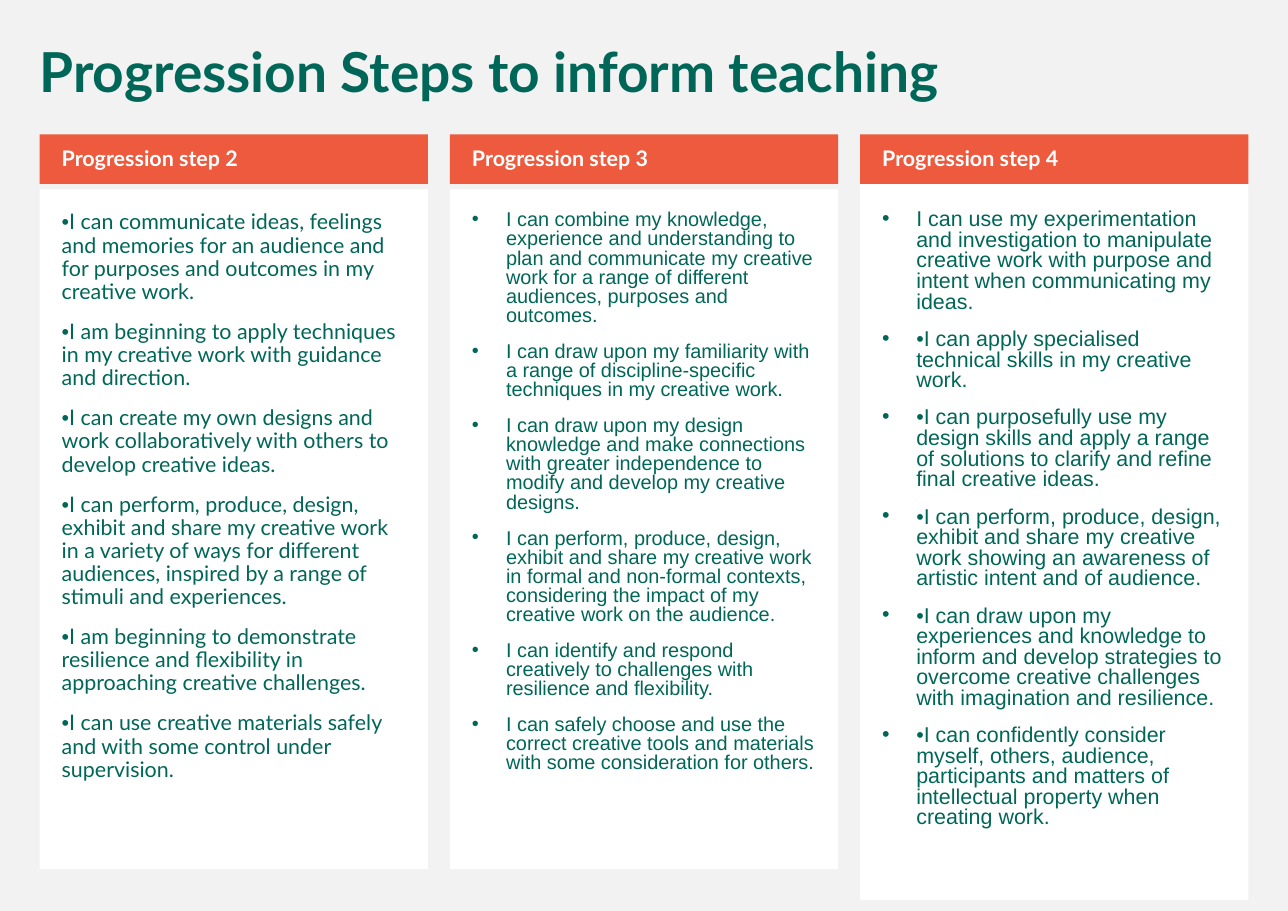
from dataclasses import dataclass

from lxml.etree import SubElement
from pptx import Presentation
from pptx.dml.color import RGBColor
from pptx.enum.shapes import MSO_SHAPE as Preset
from pptx.enum.text import MSO_ANCHOR as Anchor, PP_ALIGN as Align
from pptx.oxml.ns import qn
from pptx.util import Inches, Pt

WIDTH, HEIGHT = 11.69, 8.27
MARGIN, GAP = 0.36, 0.2
COLUMN_WIDTH = (WIDTH - 2 * MARGIN - 2 * GAP) / 3
COLUMN_TOP, HEADING_HEIGHT = 1.22, 0.45
INDENT = 0.31
GREEN, ORANGE, WHITE, GREY = "006758", "ED5A3E", "FFFFFF", "F2F2F2"


@dataclass
class Step:
    """A progression step and the setting of its statements."""

    heading: str
    statements: list
    size: int
    spacing: float
    hanging: bool
    panel_offset: float = 0.5
    panel_height: float = 6.17
    top_inset: float = 0.2


STEPS = [
    Step("Progression step 2", [
        "I can communicate ideas, feelings and memories for an audience and for purposes and outcomes in my creative work.",
        "I am beginning to apply techniques in my creative work with guidance and direction.",
        "I can create my own designs and work collaboratively with others to develop creative ideas.",
        "I can perform, produce, design, exhibit and share my creative work in a variety of ways for different audiences, inspired by a range of stimuli and experiences.",
        "I am beginning to demonstrate resilience and flexibility in approaching creative challenges.",
        "I can use creative materials safely and with some control under supervision.",
    ], 14, 0.9, False),
    Step("Progression step 3", [
        "I can combine my knowledge, experience and understanding to plan and communicate my creative work for a range of different audiences, purposes and outcomes.",
        "I can draw upon my familiarity with a range of discipline-specific techniques in my creative work.",
        "I can draw upon my design knowledge and make connections with greater independence to modify and develop my creative designs.",
        "I can perform, produce, design, exhibit and share my creative work in formal and non-formal contexts, considering the impact of my creative work on the audience.",
        "I can identify and respond creatively to challenges with resilience and flexibility.",
        "I can safely choose and use the correct creative tools and materials with some consideration for others.",
    ], 13, 0.8, True),
    Step("Progression step 4", [
        "I can use my experimentation and investigation to manipulate creative work with purpose and intent when communicating my ideas.",
        "•I can apply specialised technical skills in my creative work.",
        "•I can purposefully use my design skills and apply a range of solutions to clarify and refine final creative ideas.",
        "•I can perform, produce, design, exhibit and share my creative work showing an awareness of artistic intent and of audience.",
        "•I can draw upon my experiences and knowledge to inform and develop strategies to overcome creative challenges with imagination and resilience.",
        "•I can confidently consider myself, others, audience, participants and matters of intellectual property when creating work.",
    ], 14, 0.8, True, 0.22, 6.73, 0.47),
]


def paint(color_format, color):
    """Set a colour format from a hex string."""
    color_format.rgb = RGBColor.from_string(color)


def set_frame(frame, insets, anchor=Anchor.TOP):
    """Wrap a text frame and set its left, top, right and bottom insets."""
    frame.word_wrap = True
    frame.vertical_anchor = anchor
    frame.margin_left, frame.margin_top, frame.margin_right, frame.margin_bottom = map(Inches, insets)


def add_panel(slide, left, top, width, height, color):
    """Add a plain filled rectangle and return its text frame."""
    panel = slide.shapes.add_shape(Preset.RECTANGLE, *map(Inches, (left, top, width, height)))
    panel.shadow.inherit = False
    panel.fill.solid()
    paint(panel.fill.fore_color, color)
    panel.line.fill.background()
    return panel.text_frame


def set_paragraph(paragraph, spacing):
    """Align a paragraph left and set its spacing."""
    paragraph.alignment = Align.LEFT
    paragraph.line_spacing = spacing
    paragraph.space_before = Pt(11)


def add_run(paragraph, text, size, color, font="Lato", bold=False):
    """Add one formatted run."""
    run = paragraph.add_run()
    run.text = text
    run.font.name = font
    run.font.size = Pt(size)
    run.font.bold = bold
    paint(run.font.color, color)


def hang_bullet(paragraph):
    """Give a paragraph a hanging bullet."""
    properties = paragraph._p.get_or_add_pPr()
    properties.set("marL", str(Inches(INDENT)))
    properties.set("indent", str(-Inches(INDENT)))
    SubElement(properties, qn("a:buFont"), typeface="Arial")
    SubElement(properties, qn("a:buChar"), char="•")


def add_title(slide, left, top, width, height):
    """Place the slide title in its box."""
    title = slide.shapes.add_textbox(*map(Inches, (left, top, width, height))).text_frame
    set_frame(title, (0.1, 0.05, 0.1, 0.05))
    set_paragraph(title.paragraphs[0], 0.9)
    add_run(title.paragraphs[0], "Progression Steps to inform teaching", 36, GREEN, bold=True)


def add_step(slide, step, left, top, width):
    """Place a step's statements and its heading bar in a column."""
    body = add_panel(slide, left, top + step.panel_offset, width, step.panel_height, WHITE)
    set_frame(body, (0.2, step.top_inset, 0.2, 0.2))
    for index, statement in enumerate(step.statements):
        paragraph = body.add_paragraph() if index else body.paragraphs[0]
        set_paragraph(paragraph, step.spacing)
        if step.hanging:
            hang_bullet(paragraph)
            add_run(paragraph, statement, step.size, GREEN, "Arial")
        else:
            add_run(paragraph, "•", step.size, GREEN, "Arial")
            add_run(paragraph, statement, step.size, GREEN)

    heading = add_panel(slide, left, top, width, HEADING_HEIGHT, ORANGE)
    set_frame(heading, (0.2, 0.05, 0.1, 0.05), Anchor.MIDDLE)
    set_paragraph(heading.paragraphs[0], 0.9)
    add_run(heading.paragraphs[0], step.heading, 14, WHITE, bold=True)


def main():
    """Build and save the slide."""
    deck = Presentation()
    deck.slide_width, deck.slide_height = Inches(WIDTH), Inches(HEIGHT)
    slide = deck.slides.add_slide(deck.slide_layouts[6])
    slide.background.fill.solid()
    paint(slide.background.fill.fore_color, GREY)
    for column, step in enumerate(STEPS):
        add_step(slide, step, MARGIN + column * (COLUMN_WIDTH + GAP), COLUMN_TOP, COLUMN_WIDTH)
    add_title(slide, MARGIN - 0.1, MARGIN, WIDTH - 2 * MARGIN + 0.1, 0.65)
    deck.save("out.pptx")


if __name__ == "__main__":
    main()
